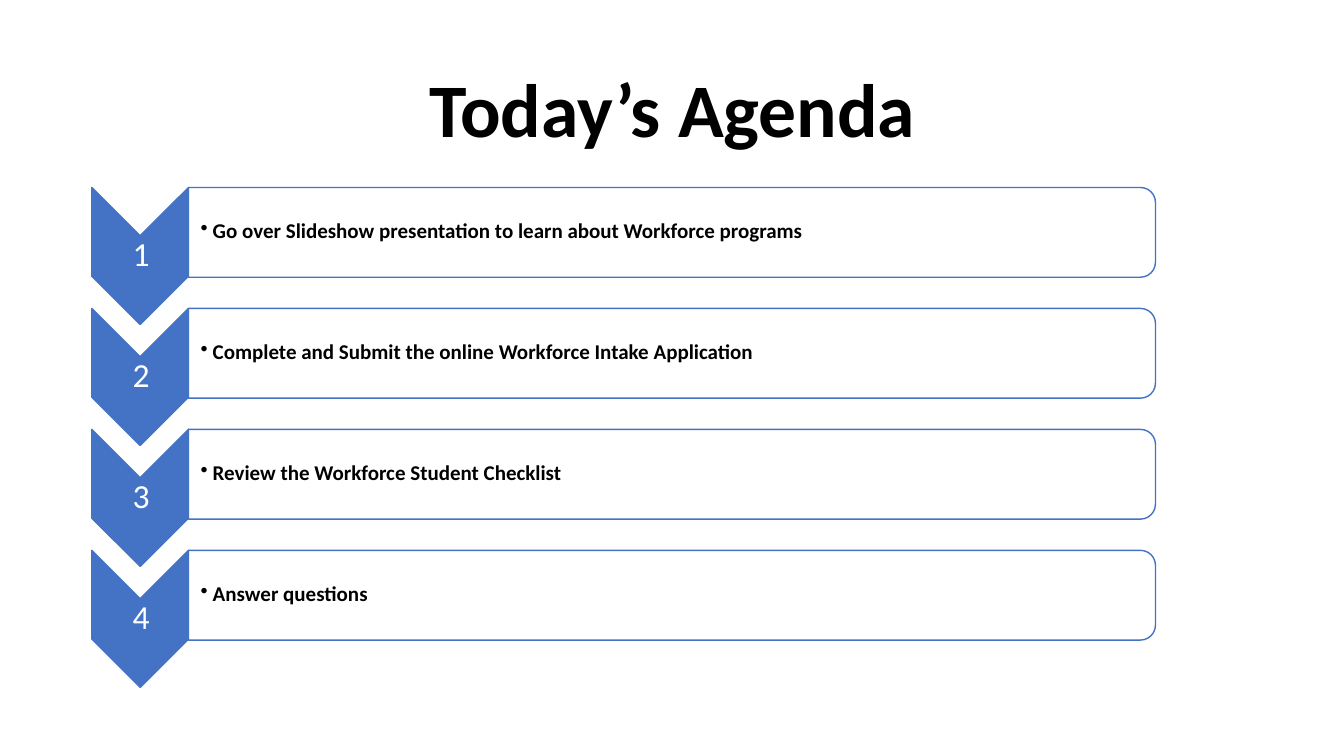
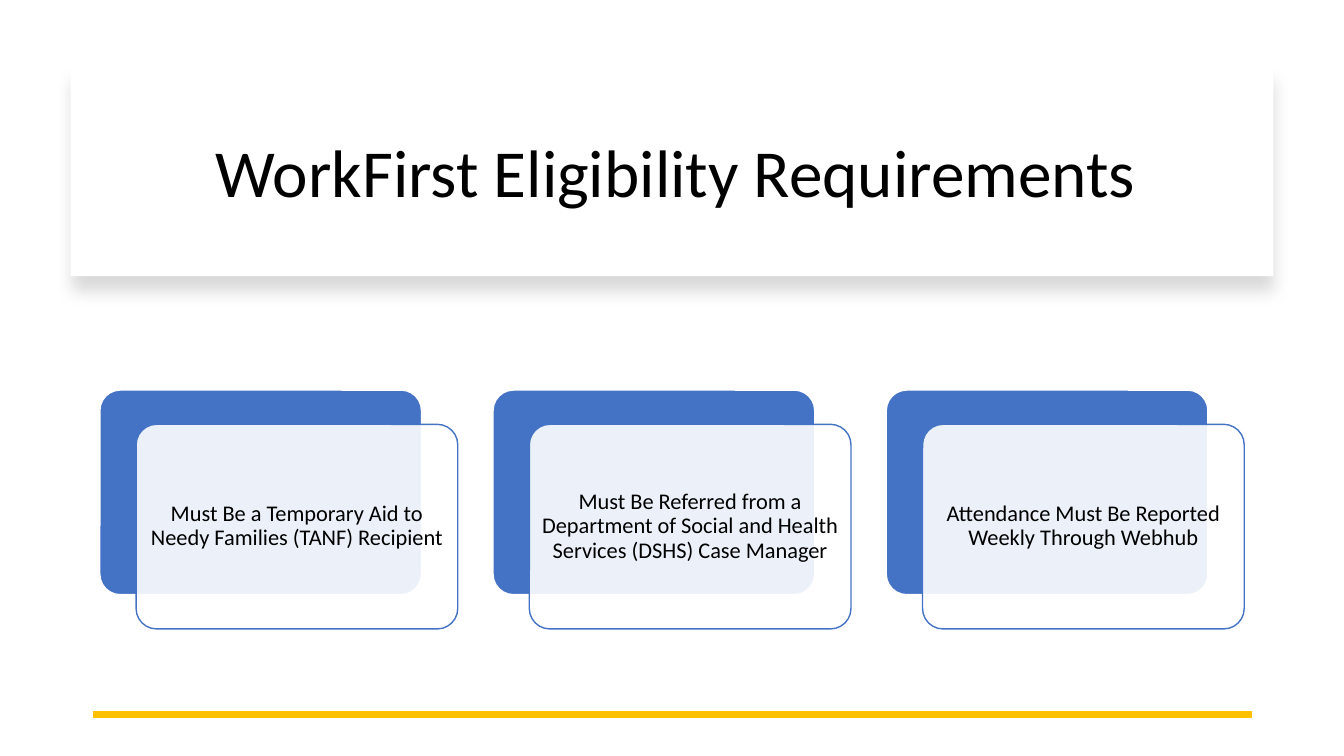
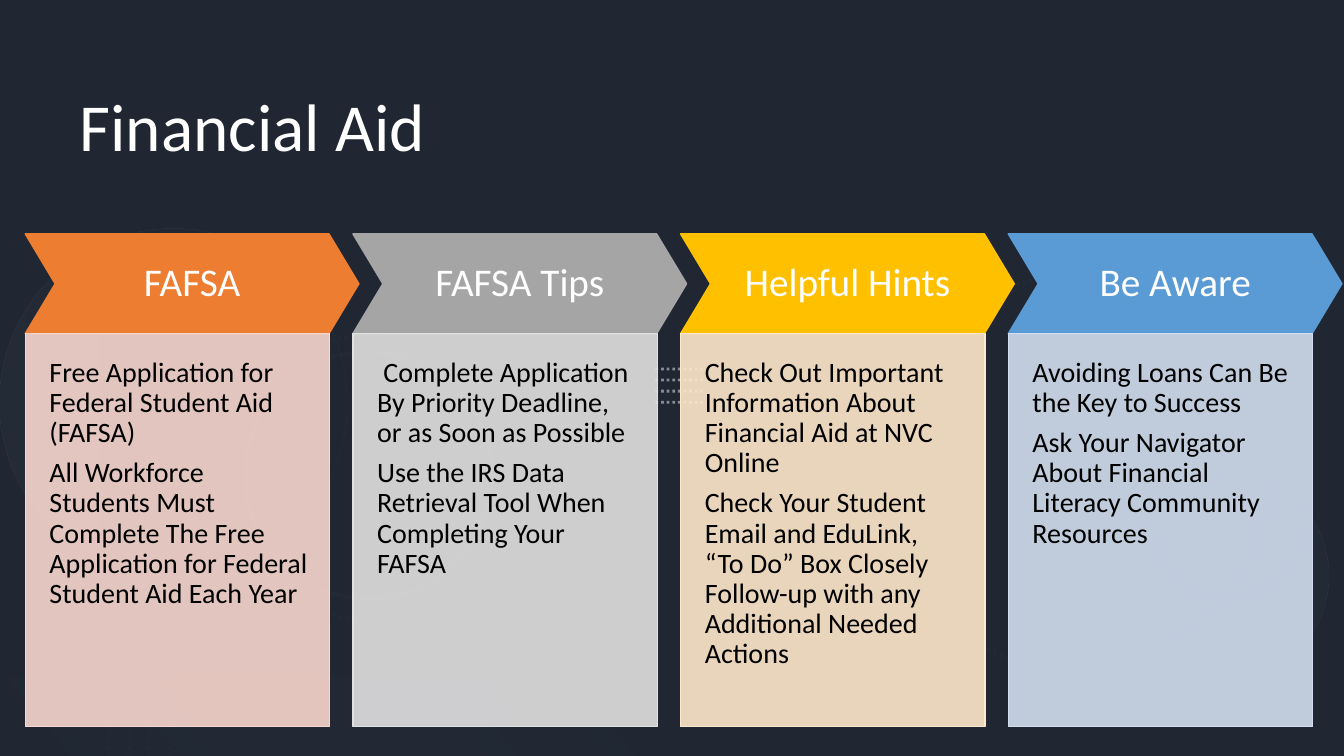
from dataclasses import dataclass

from lxml.etree import SubElement
from pptx import Presentation
from pptx.dml.color import RGBColor as Color
from pptx.enum.dml import MSO_LINE as Dash
from pptx.enum.shapes import MSO_CONNECTOR as Connector, MSO_SHAPE as Kind
from pptx.enum.text import MSO_ANCHOR as Anchor, PP_ALIGN as Align
from pptx.oxml.ns import qn
from pptx.util import Inches, Pt


@dataclass(frozen=True)
class Theme:
    font: str = "Calibri"
    black: str = "000000"
    white: str = "FFFFFF"
    blue: str = "4472C4"
    gold: str = "FFC000"
    night: str = "202732"
    navy: str = "222A35"
    slate: str = "333F50"
    mist: str = "8497B0"
    pale: str = "F1F0F0"
    agenda_title: int = 54
    title: int = 48
    heading: int = 28
    number: int = 24
    panel: int = 20
    card: int = 16
    item: int = 15


theme = Theme()


def place(page, kind, box, fill=None, line=None, weight=1, opacity=100, dash=None, rotation=0):
    left, top, width, height = [Inches(value) for value in box]
    if kind is Connector.STRAIGHT:
        shape = page.shapes.add_connector(kind, left, top, left + width, top + height)
        SubElement(shape.element.spPr, qn("a:effectLst"))
    else:
        shape = page.shapes.add_shape(kind, left, top, width, height)
        shape.shadow.inherit = False
        shape.rotation = rotation
        shape.fill.background()
        if fill:
            shape.fill.solid()
            shape.fill.fore_color.rgb = Color.from_string(fill)
    shape.line.fill.background()
    if line:
        shape.line.color.rgb = Color.from_string(line)
        shape.line.width = Pt(weight)
        shape.line.dash_style = dash
    if opacity < 100:
        tint = shape.element.spPr.find(".//" + qn("a:srgbClr"))
        SubElement(tint, qn("a:alpha"), val=str(opacity * 1000))
    return shape


def write(shape, lines, size, color, align=Align.CENTER, anchor=Anchor.MIDDLE,
          insets=(0.1, 0.05, 0.1, 0.05), bold=False):
    frame = shape.text_frame
    frame.word_wrap = True
    frame.vertical_anchor = anchor
    frame.margin_left, frame.margin_top, frame.margin_right, frame.margin_bottom = [
        Inches(value) for value in insets]
    frame.text = "\n".join(lines)
    for para in frame.paragraphs:
        para.alignment = align
        para.line_spacing = 0.9
        para.space_after = Pt(round(size * 0.35)) if len(lines) > 1 else Pt(0)
        para.font.name = theme.font
        para.font.size = Pt(size)
        para.font.bold = bold
        para.font.color.rgb = Color.from_string(color)


deck = Presentation()
deck.slide_width, deck.slide_height = Inches(13.33), Inches(7.5)
title_styles = [
    ("Today’s Agenda", (0.92, 0.4, 11.5, 1.45), theme.agenda_title, theme.black,
     Align.CENTER, Anchor.MIDDLE, True),
    ("WorkFirst Eligibility Requirements", (1.14, 0.89, 11.13, 1.7), theme.title, theme.black,
     Align.CENTER, Anchor.MIDDLE, False),
    ("Financial Aid", (0.69, 0.88, 5.59, 5.82), theme.title, theme.white,
     Align.LEFT, Anchor.TOP, False),
]
pages = []
for text, box, size, color, align, anchor, bold in title_styles:
    page = deck.slides.add_slide(deck.slide_layouts[5])
    title = page.shapes.title
    title.left, title.top, title.width, title.height = [Inches(value) for value in box]
    write(title, [text], size, color, align, anchor, bold=bold)
    pages.append(page)
agenda, eligibility, aid = pages

agenda_items = [
    "Go over Slideshow presentation to learn about Workforce programs",
    "Complete and Submit the online Workforce Intake Application",
    "Review the Workforce Student Checklist",
    "Answer questions",
]
for index, item in enumerate(agenda_items):
    offset = 1.2 * index
    place(agenda, Kind.CHEVRON, (0.71, 2.06 + offset, 1.36, 0.96),
          theme.blue, theme.blue, rotation=90)
    number = agenda.shapes.add_textbox(
        Inches(0.92), Inches(2.33 + offset), Inches(0.96), Inches(0.41))
    write(number, [str(index + 1)], theme.number, theme.white, insets=[0.02] * 4)
    place(agenda, Kind.ROUND_2_SAME_RECTANGLE, (6.22, offset - 2.49, 0.89, 9.59),
          theme.white, theme.blue, opacity=90, rotation=90)
    label = agenda.shapes.add_textbox(
        Inches(1.87), Inches(1.9 + offset), Inches(9.54), Inches(0.8))
    write(label, [item], theme.item, theme.black, Align.LEFT,
          insets=(0.12, 0.01, 0.01, 0.01), bold=True)
    properties = label.element.find(".//" + qn("a:pPr"))
    properties.set("marL", str(Inches(0.12)))
    properties.set("indent", str(-Inches(0.12)))
    bullet = properties.makeelement(qn("a:buChar"), {"char": "•"})
    properties.find(qn("a:defRPr")).addprevious(bullet)

banner = place(eligibility, Kind.RECTANGLE, (0.7, 0.67, 11.93, 2.07), theme.white)
eligibility.shapes.title.element.addprevious(banner.element)
shadow = SubElement(banner.element.spPr.find(qn("a:effectLst")), qn("a:outerShdw"),
                    blurRad=str(Pt(11)), dist=str(Pt(10)), dir="5400000", rotWithShape="0")
shade = SubElement(shadow, qn("a:srgbClr"), val=theme.black)
SubElement(shade, qn("a:alpha"), val="15000")

requirements = [
    "Must Be a Temporary Aid to Needy Families (TANF) Recipient",
    "Must Be Referred from a Department of Social and Health Services (DSHS) Case Manager",
    "Attendance Must Be Reported Weekly Through Webhub",
]
for index, requirement in enumerate(requirements):
    left = 0.99 + 3.9 * index
    back = place(eligibility, Kind.ROUNDED_RECTANGLE, (left, 3.87, 3.19, 2.03),
                 theme.blue, theme.white)
    front = place(eligibility, Kind.ROUNDED_RECTANGLE, (left + 0.36, 4.21, 3.19, 2.03),
                  theme.white, theme.blue, opacity=90)
    back.adjustments[0] = front.adjustments[0] = 0.1
    write(front, [requirement], theme.card, theme.black, insets=[0.06] * 4)
place(eligibility, Connector.STRAIGHT, (0.92, 7.09, 11.5, 0), line=theme.gold, weight=4.5)

aid.background.fill.solid()
aid.background.fill.fore_color.rgb = Color.from_string(theme.night)
rings = [
    (8.69, 2.74, 3.9, 75, Dash.ROUND_DOT),
    (11.41, 4.43, 1.51, 270, Dash.ROUND_DOT),
    (2.24, 3.33, 2.82, 75, Dash.ROUND_DOT),
    (2.43, 3.49, 2.45, 75, None),
]
for left, top, size, rotation, dash in rings:
    place(aid, Kind.OVAL, (left, top, size, size), line=theme.navy, weight=2.5,
          dash=dash, rotation=rotation)
glows = [
    (Kind.OVAL, (0, 2.27, 3.44, 3.44), 270, 270, [(theme.slate, 20), (theme.navy, 10)]),
    (Kind.OVAL, (11.1, 4.67, 2.08, 2.08), 210, 270, [(theme.slate, 10), (theme.slate, 20)]),
    (Kind.RECTANGLE, (0, 6.72, 6.67, 0.78), 180, 220, [(theme.navy, 10), (theme.mist, 0)]),
]
for kind, box, rotation, angle, stops in glows:
    glow = place(aid, kind, box, rotation=rotation)
    glow.fill.gradient()
    glow.fill.gradient_angle = angle
    for stop, (color, _) in zip(glow.fill.gradient_stops, stops):
        stop.color.rgb = Color.from_string(color)
    for tint, (_, opacity) in zip(glow.element.spPr.findall(".//" + qn("a:srgbClr")), stops):
        SubElement(tint, qn("a:alpha"), val=str(opacity * 1000))
for index in range(4):
    place(aid, Connector.STRAIGHT, (1.08 + 0.2 * index, 6.09, 0, 1.41),
          line=theme.navy, weight=2.5, dash=Dash.ROUND_DOT)
    place(aid, Connector.STRAIGHT, (6.5, 3.66 + 0.11 * index, 0.47, 0),
          line=theme.pale, weight=2, opacity=50, dash=Dash.ROUND_DOT)

topics = [
    ("FAFSA", "ED7D31", "F8D7CE", [
        "Free Application for Federal Student Aid (FAFSA)",
        "All Workforce Students Must Complete The Free Application for Federal Student Aid Each Year"]),
    ("FAFSA Tips", "A5A5A5", "E1E1E1", [
        " Complete Application By Priority Deadline, or as Soon as Possible",
        "Use the IRS Data Retrieval Tool When Completing Your FAFSA"]),
    ("Helpful Hints", theme.gold, "FFE8CC", [
        "Check Out Important Information About Financial Aid at NVC Online",
        "Check Your Student Email and EduLink, “To Do” Box Closely Follow-up with any "
        "Additional Needed Actions"]),
    ("Be Aware", "5B9BD5", "D2DEEF", [
        "Avoiding Loans Can Be the Key to Success",
        "Ask Your Navigator About Financial Literacy Community Resources"]),
]
for index, (heading, strong, soft, points) in enumerate(topics):
    left = 0.25 + 3.25 * index
    arrow = place(aid, Kind.CHEVRON, (left, 2.32, 3.31, 0.99), strong, strong)
    arrow.adjustments[0] = 0.3
    write(arrow, [heading], theme.heading, theme.white, insets=[0] * 4)
    panel = place(aid, Kind.RECTANGLE, (left, 3.31, 3.02, 3.9), soft, soft, opacity=90)
    write(panel, points, theme.panel, theme.black, Align.LEFT, Anchor.TOP,
          (0.24, 0.24, 0.22, 0.48))

deck.save("out.pptx")
